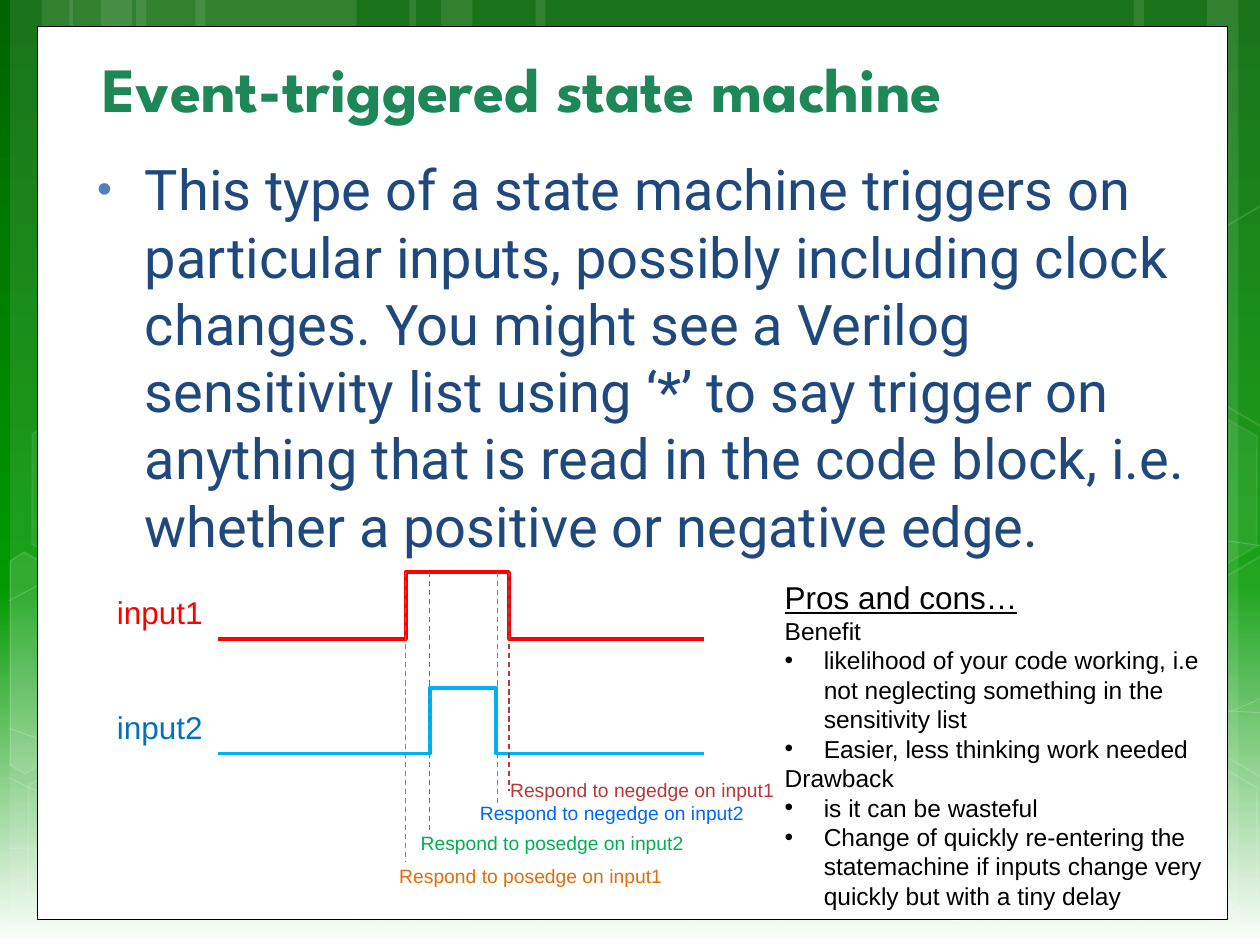
from copy import deepcopy
from math import cos, radians, sin

from lxml.etree import SubElement
from pptx import Presentation
from pptx.dml.color import RGBColor
from pptx.enum.dml import MSO_LINE
from pptx.enum.shapes import MSO_CONNECTOR, MSO_SHAPE
from pptx.enum.text import MSO_ANCHOR, MSO_AUTO_SIZE, PP_ALIGN
from pptx.oxml.ns import qn
from pptx.util import Inches, Pt

COLORS = {
    "white": "FFFFFF", "black": "000000", "title": "1D8757", "body": "1F497D",
    "bullet": "4F81BD", "red": "FF0000", "sky": "00B0F0", "input2": "0070C0",
    "blue": "0066FF", "green": "00B050", "orange": "E46C0A", "brick": "B93737",
}
BACKGROUND = [(0, "006400"), (0.62, "009900"), (1, "FFFFFF")]

TITLE = "Event-triggered state machine"
BODY = ("This type of a state machine triggers on particular inputs, possibly including "
        "clock changes. You might see a Verilog sensitivity list using ‘*’ to say trigger on "
        "anything that is read in the code block, i.e. whether a positive or negative edge.")
PROS_HEADING = "Pros and cons…"
PROS_AND_CONS = [
    ("Benefit", ["likelihood of your code working, i.e not neglecting something in the "
                 "sensitivity list",
                 "Easier, less thinking work needed"]),
    ("Drawback", ["is it can be wasteful",
                  "Change of quickly re-entering the statemachine if inputs change very "
                  "quickly but with a tiny delay"]),
]
# name, label colour, line colour, label top, low level, high level, rise, fall
SIGNALS = [
    ("input1", "red", "red", 4.66, 5.07, 4.54, 3.22, 4.04),
    ("input2", "input2", "sky", 5.57, 5.98, 5.46, 3.41, 3.94),
]
SIGNAL_LEFT, SIGNAL_RIGHT = 1.73, 5.59
# edge, line x, line end, line colour, label left, label top, label colour
EDGES = [
    ("negedge on input2", 3.95, 6.39, "sky", 3.71, 6.31, "blue"),
    ("posedge on input2", 3.41, 6.59, "green", 3.24, 6.55, "green"),
    ("posedge on input1", 3.22, 6.84, "orange", 3.07, 6.81, "orange"),
    ("negedge on input1", 4.04, 6.28, "brick", 3.95, 6.13, "brick"),
]

# left, width of the full-height stripes
STRIPES = [(1.08, 1.75), (0.08, 0.5), (0.33, 0.83), (1.55, 1.75), (0.55, 0.5), (0.8, 0.83),
           (7.33, 1.75), (9.58, 0.5), (9, 0.83), (4.25, 3.08), (3.25, 0.5), (3.5, 0.83)]
# left, top, fill opacity, line opacity
HEXAGONS = [(3.34, 0.36, 4, 8), (4.97, 5.89, 6, 12), (0.11, 5.91, 0, 12), (0.14, 3.12, 7, 8),
            (1.74, 5.92, 0, 12), (8.34, 5.93, 0, 12), (8.34, 3.14, 7, 8)]
# centre, fill opacity, corners as seen on the slide
CUT_HEXAGONS = [
    ((0.36, 5.35), 10, [(0.08, 4.45), (0.19, 4.38), (0.96, 4.82), (0.95, 5.7), (0.2, 6.14),
                        (0.08, 6.07)]),
    ((9.85, 5.2), 4, [(9.26, 4.85), (10.01, 4.41), (10.09, 4.46), (10.09, 6.13),
                      (10.02, 6.17), (9.26, 5.73)]),
    ((9.85, 2.41), 0, [(9.26, 2.07), (10.01, 1.63), (10.1, 1.68), (10.09, 3.35),
                       (10.02, 3.39), (9.26, 2.95)]),
]
# Bézier chains: anchor, control, control, anchor, ...
CURVES = [
    [(0.07, 6.73), (0.61, 6.76), (1.15, 6.79), (1.9, 6.78), (2.65, 6.77), (3.58, 6.75),
     (4.58, 6.65), (5.58, 6.55), (7, 6.36), (7.92, 6.17), (8.83, 5.98), (9.77, 5.68),
     (10.07, 5.51)],
    [(0.07, 4.77), (0.36, 4.61), (0.65, 4.46), (1.21, 4.31), (1.78, 4.16), (2.59, 3.94),
     (3.47, 3.87), (4.36, 3.8), (5.44, 3.79), (6.54, 3.87), (7.64, 3.95), (9.47, 4.26),
     (10.07, 4.34)],
    [(0.06, 6.17), (1.27, 6.72), (2.47, 7.27), (3.34, 7.49)],
    [(0.07, 5.78), (0.38, 5.89), (0.7, 6), (1.28, 6.16), (1.86, 6.31), (2.73, 6.56),
     (3.57, 6.73), (4.4, 6.9), (5.45, 7.08), (6.28, 7.18), (7.11, 7.29), (8, 7.33),
     (8.53, 7.36), (9.05, 7.4), (9.19, 7.38), (9.45, 7.38), (9.71, 7.37), (9.89, 7.35),
     (10.07, 7.34)],
    [(2.42, 7.49), (2.6, 7.29), (2.78, 7.09), (3.02, 6.91), (3.26, 6.73), (3.6, 6.53),
     (3.88, 6.39), (4.16, 6.25), (4.33, 6.19), (4.7, 6.09), (5.06, 5.99), (5.73, 5.85),
     (6.08, 5.78), (6.44, 5.71), (6.49, 5.71), (6.8, 5.69), (7.11, 5.66), (7.6, 5.63),
     (7.94, 5.62), (8.4, 5.61), (9.3, 5.61), (10.06, 5.66)],
]


def rgb(name):
    return RGBColor.from_string(COLORS[name])


def paint(color_format, name, opacity=100):
    color_format.solid()
    color_format.fore_color.rgb = rgb(name)
    if opacity < 100:
        color = color_format._xPr.find(".//" + qn("a:srgbClr"))
        SubElement(color, qn("a:alpha"), val=str(opacity * 1000))


def style(shape, fill=None, fill_opacity=100, line=None, width=1, line_opacity=100):
    shape.shadow.inherit = False
    if fill and fill_opacity:
        paint(shape.fill, fill, fill_opacity)
    else:
        shape.fill.background()
    if line:
        paint(shape.line.fill, line, line_opacity)
        shape.line.width = Pt(width)
    else:
        shape.line.fill.background()


def add_preset(slide, kind, box, **look):
    shape = slide.shapes.add_shape(kind, *map(Inches, box))
    style(shape, **look)
    return shape


def add_path(slide, points, close=False, **look):
    corners = [(Inches(x), Inches(y)) for x, y in points]
    builder = slide.shapes.build_freeform(*corners[0])
    builder.add_line_segments(corners[1:], close=close)
    shape = builder.convert_to_shape()
    style(shape, **look)
    return shape


def sample_curve(chain, steps=8):
    points = [chain[0]]
    for i in range(0, len(chain) - 1, 3):
        for t in (step / steps for step in range(1, steps + 1)):
            weights = ((1 - t) ** 3, 3 * t * (1 - t) ** 2, 3 * t * t * (1 - t), t ** 3)
            points.append(tuple(sum(w * p[axis] for w, p in zip(weights, chain[i:i + 4]))
                                for axis in (0, 1)))
    return points


def turn(point, centre, degrees):
    x, y = point[0] - centre[0], point[1] - centre[1]
    c, s = cos(radians(degrees)), sin(radians(degrees))
    return centre[0] + x * c - y * s, centre[1] + x * s + y * c


def write(frame, text, size, color, font="Arial", bold=None, underline=None,
          bullet=None, margin=0.31, hanging=0.31, bullet_color=None, bullet_size=100):
    """Fill the empty first paragraph of the frame, or append one."""
    paragraph = frame.paragraphs[0] if not frame.text else frame.add_paragraph()
    paragraph.alignment = PP_ALIGN.LEFT
    run = paragraph.add_run()
    run.text = text
    run.font.name, run.font.size = font, Pt(size)
    run.font.bold, run.font.underline = bold, underline
    run.font.color.rgb = rgb(color)
    if bullet:
        properties = paragraph._p.get_or_add_pPr()
        properties.set("marL", str(Inches(margin)))
        properties.set("indent", str(-Inches(hanging)))
        holder = SubElement(properties, qn("a:buClr"))
        SubElement(holder, qn("a:srgbClr"), val=COLORS[bullet_color or color])
        SubElement(properties, qn("a:buSzPct"), val=str(bullet_size * 1000))
        SubElement(properties, qn("a:buFont"), typeface="Arial")
        SubElement(properties, qn("a:buChar"), char=bullet)


def add_text_box(slide, box, wrap=False):
    frame = slide.shapes.add_textbox(*map(Inches, box)).text_frame
    frame.word_wrap = wrap
    frame.auto_size = MSO_AUTO_SIZE.SHAPE_TO_FIT_TEXT
    return frame


def fill_placeholder(slide, shape, box, text, anchor, **look):
    slide.shapes._spTree.append(shape._element)  # in front of the backdrop
    shape.left, shape.top, shape.width, shape.height = map(Inches, box)
    shape.text_frame.auto_size = MSO_AUTO_SIZE.NONE
    shape.text_frame.vertical_anchor = anchor
    write(shape.text_frame, text, **look)


def add_backdrop(slide):
    fill = slide.background.fill
    fill.gradient()
    fill.gradient_angle = 270
    stop_list = slide._element.find(".//" + qn("a:gsLst"))
    stop_list.append(deepcopy(stop_list[-1]))
    for stop, (position, color) in zip(fill.gradient_stops, BACKGROUND):
        stop.position, stop.color.rgb = position, RGBColor.from_string(color)

    for left, width in STRIPES:
        add_preset(slide, MSO_SHAPE.RECTANGLE, (left, 0, width, 7.5),
                   fill="white", fill_opacity=10)
    for chain in CURVES:
        add_path(slide, sample_curve(chain), line="white", width=0.5, line_opacity=20)
    for left, top, fill_opacity, line_opacity in HEXAGONS:
        hexagon = add_preset(slide, MSO_SHAPE.HEXAGON, (left, top, 1.75, 1.52), fill="white",
                             fill_opacity=fill_opacity, line="white", line_opacity=line_opacity)
        hexagon.adjustments[0] = 0.285
        hexagon.rotation = 30
    for centre, fill_opacity, corners in CUT_HEXAGONS:
        upright = [turn(corner, centre, -30) for corner in corners]
        add_path(slide, upright, close=True, fill="white", fill_opacity=fill_opacity,
                 line="white", line_opacity=12).rotation = 30
    add_preset(slide, MSO_SHAPE.RECTANGLE, (0.3, 0.21, 9.44, 7.09),
               fill="white", line="black", width=0.5)


def add_timing_diagram(slide):
    for name, color, line, top, low, high, rise, fall in SIGNALS:
        add_path(slide, [(SIGNAL_LEFT, low), (rise, low), (rise, high), (fall, high),
                         (fall, low), (SIGNAL_RIGHT, low)], line=line, width=2.25)
        write(add_text_box(slide, (0.83, top, 0.97, 0.4)), name, 18, color)
    for edge, x, end, line, left, top, color in EDGES:
        connector = slide.shapes.add_connector(
            MSO_CONNECTOR.STRAIGHT, *map(Inches, (x, 4.54, x, end)))
        paint(connector.line.fill, line)
        connector.line.width = Pt(0.75)
        connector.line.dash_style = MSO_LINE.DASH
        SubElement(connector._element.spPr, qn("a:effectLst"))
        write(add_text_box(slide, (left, top, 2.31, 0.29)), "Respond to " + edge, 11, color)


def main():
    presentation = Presentation()
    presentation.slide_width, presentation.slide_height = Inches(10), Inches(7.5)
    slide = presentation.slides.add_slide(presentation.slide_layouts[1])
    title, body = slide.placeholders
    add_backdrop(slide)
    fill_placeholder(slide, title, (0.71, 0.28, 8.42, 0.76), TITLE, MSO_ANCHOR.BOTTOM,
                     size=36, color="title", font="League Spartan", bold=True)
    fill_placeholder(slide, body, (0.67, 1.18, 8.9, 4.94), BODY, MSO_ANCHOR.TOP,
                     size=32, color="body", font="Roboto", bullet="•", margin=0.38,
                     hanging=0.4, bullet_color="bullet", bullet_size=76)
    add_timing_diagram(slide)
    frame = add_text_box(slide, (6.13, 4.54, 3.54, 2.76), wrap=True)
    write(frame, PROS_HEADING, 18, "black", underline=True)
    for heading, items in PROS_AND_CONS:
        write(frame, heading, 14, "black")
        for item in items:
            write(frame, item, 14, "black", bullet="•")
    presentation.save("out.pptx")


if __name__ == "__main__":
    main()
